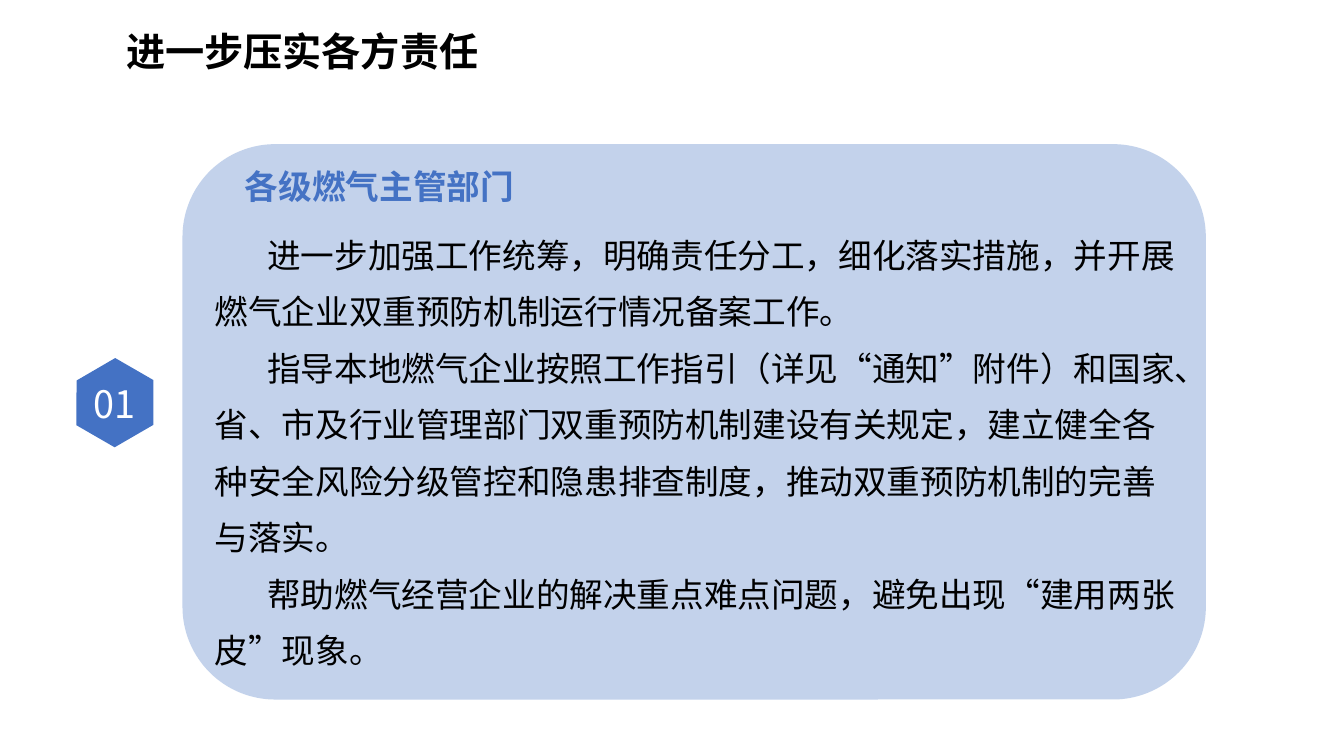
from dataclasses import dataclass

from lxml import etree
from pptx import Presentation
from pptx import util as u
from pptx.dml.color import RGBColor
from pptx.enum import shapes, text
from pptx.oxml import ns

EMU_PER_PX = 9144  # 100 px to the inch


@dataclass(frozen=True)
class Theme:
    font: str = "Noto Sans CJK SC"
    ink: str = "000000"
    accent: str = "4472C4"
    panel: str = "B4C7E7"
    light: str = "FFFFFF"
    title_size: int = 28
    number_size: int = 27
    body_size: int = 24


def px(length):
    return u.Emu(length * EMU_PER_PX)


def write(shape, *lines, size, color, font, bold=False, align=text.PP_ALIGN.LEFT,
          anchor=text.MSO_ANCHOR.TOP, insets=(0, 0), spacing=1.0, indent=0):
    """Fill a shape with one paragraph per line; insets are (sides, top and bottom)."""
    frame = shape.text_frame
    frame.word_wrap = True
    frame.auto_size = text.MSO_AUTO_SIZE.NONE
    frame.vertical_anchor = anchor
    frame.margin_left = frame.margin_right = px(insets[0])
    frame.margin_top = frame.margin_bottom = px(insets[1])
    frame.text = "\n".join(lines)
    for paragraph in frame.paragraphs:
        paragraph.alignment = align
        paragraph.line_spacing = spacing
        paragraph.space_before = paragraph.space_after = u.Pt(0)
        properties = paragraph._p.get_or_add_pPr()
        properties.set("marL", "0")
        properties.set("indent", str(px(indent)))
        etree.SubElement(properties, ns.qn("a:buNone"))
        run = paragraph.runs[0]
        run.font.size = u.Pt(size)
        run.font.bold = bold
        run.font.color.rgb = RGBColor.from_string(color)
        run.font.name = font
        east_asian = etree.SubElement(run._r.get_or_add_rPr(), ns.qn("a:ea"))
        east_asian.set("typeface", font)


class SlideBuilder:
    def __init__(self, slide, theme):
        self.slide = slide
        self.theme = theme

    def shape(self, kind, box, color, adjustment, opacity=100, rotation=0):
        shape = self.slide.shapes.add_shape(kind, *map(px, box))
        shape.shadow.inherit = False
        shape.adjustments[0] = adjustment
        shape.rotation = rotation
        shape.fill.solid()
        shape.fill.fore_color.rgb = RGBColor.from_string(color)
        shape.line.fill.background()
        if opacity < 100:
            fill_color = shape._element.spPr.find(".//" + ns.qn("a:srgbClr"))
            etree.SubElement(fill_color, ns.qn("a:alpha")).set("val", str(opacity * 1000))

    def label(self, box, content, **style):
        shape = self.slide.shapes.add_textbox(*map(px, box))
        write(shape, content, font=self.theme.font, **style)

    def placeholder(self, index, box, *lines, **style):
        """Move a template placeholder to the front and fill it."""
        shape = self.slide.placeholders[index]
        shape.left, shape.top, shape.width, shape.height = map(px, box)
        self.slide.shapes._spTree.append(shape._element)
        write(shape, *lines, font=self.theme.font, **style)


def main():
    presentation = Presentation()
    presentation.slide_width, presentation.slide_height = px(1333), px(750)
    slide = presentation.slides.add_slide(presentation.slide_layouts[1])
    theme = Theme()
    builder = SlideBuilder(slide, theme)
    middle = text.MSO_ANCHOR.MIDDLE

    builder.shape(shapes.MSO_SHAPE.ROUNDED_RECTANGLE, (181, 143, 1015, 551),
                  theme.panel, 0.167, opacity=80)
    builder.shape(shapes.MSO_SHAPE.HEXAGON, (70, 361, 88, 77),
                  theme.accent, 0.287, rotation=30)
    builder.label((56, 364, 116, 72), "01", size=theme.number_size, color=theme.light,
                  align=text.PP_ALIGN.CENTER, anchor=middle, insets=(10, 5))
    builder.placeholder(
        1, (213, 217, 964, 365),
        "进一步加强工作统筹，明确责任分工，细化落实措施，并开展燃气企业双重预防机制运行情况备案工作。",
        "指导本地燃气企业按照工作指引（详见“通知”附件）和国家、省、市及行业管理部门双重预防机制"
        "建设有关规定，建立健全各种安全风险分级管控和隐患排查制度，推动双重预防机制的完善与落实。",
        "帮助燃气经营企业的解决重点难点问题，避免出现“建用两张皮”现象。",
        size=theme.body_size, color=theme.ink, spacing=1.4, indent=52)
    builder.label((243, 142, 315, 86), "各级燃气主管部门", size=theme.body_size,
                  color=theme.accent, bold=True, anchor=middle)
    builder.placeholder(0, (115, 22, 523, 57), "进一步压实各方责任", size=theme.title_size,
                        color=theme.ink, bold=True, insets=(10, 5))

    presentation.save("out.pptx")


if __name__ == "__main__":
    main()
